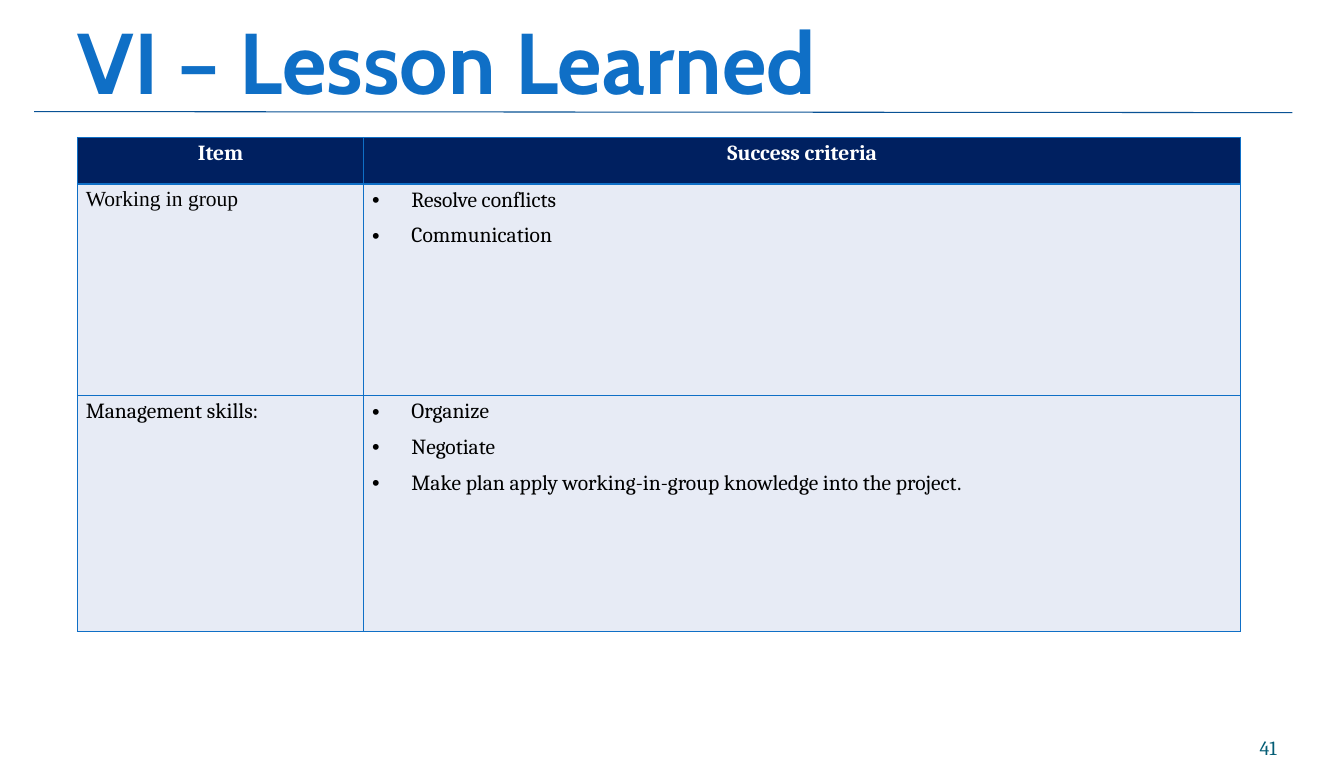
from lxml import etree
from pptx import Presentation
from pptx.dml.color import RGBColor
from pptx.enum.shapes import MSO_CONNECTOR
from pptx.enum.text import MSO_ANCHOR, MSO_AUTO_SIZE, PP_ALIGN
from pptx.oxml.ns import qn
from pptx.util import Inches, Pt

STRAIGHT = MSO_CONNECTOR.STRAIGHT
BOTTOM = MSO_ANCHOR.BOTTOM
NO_AUTOFIT = MSO_AUTO_SIZE.NONE
LEFT, CENTER, RIGHT = PP_ALIGN.LEFT, PP_ALIGN.CENTER, PP_ALIGN.RIGHT

COLORS = {
    "title": "0F6FC6",
    "white": "FFFFFF",
    "black": "000000",
    "number": "045D75",
    "rule": "095295",
    "border": "0F6FC6",
    "header": "002060",
    "body": "E7EBF5",
}


def add_line_properties(parent, tag, color, width):
    line = etree.SubElement(parent, qn(tag), w=str(Pt(width)))
    fill = etree.SubElement(line, qn("a:solidFill"))
    etree.SubElement(fill, qn("a:srgbClr"), val=COLORS[color])
    return line


def format_font(font, name, size, color, bold=False):
    font.name = name
    font.size = Pt(size)
    font.bold = bold
    font.color.rgb = RGBColor.from_string(COLORS[color])


presentation = Presentation()
presentation.slide_width = Inches(13)
presentation.slide_height = Inches(7.5)
slide = presentation.slides.add_slide(presentation.slide_layouts[5])

title = slide.shapes.title
title.left, title.top = Inches(0.75), Inches(-0.17)
title.width, title.height = Inches(11.7), Inches(1.25)
title.text_frame.text = "VI – Lesson Learned"
title.text_frame.margin_top = Inches(0.06)
title_paragraph = title.text_frame.paragraphs[0]
title_paragraph.alignment = LEFT
title_run = title_paragraph.runs[0]
format_font(title_run.font, "Cabin", 60, "title", True)
title_properties = title_run._r.get_or_add_rPr()
title_properties.insert(0, add_line_properties(title_properties, "a:ln", "white", 1.45))

number_box = slide.shapes.add_textbox(Inches(11.27), Inches(6.95), Inches(1.08), Inches(0.4))
number_box.text_frame.text = "41"
number_box.text_frame.margin_top = 0
number_paragraph = number_box.text_frame.paragraphs[0]
number_paragraph.alignment = RIGHT
format_font(number_paragraph.runs[0].font, "Cambria", 14, "number")

for shape in (title, number_box):
    frame = shape.text_frame
    frame.word_wrap = True
    frame.auto_size = NO_AUTOFIT
    frame.vertical_anchor = BOTTOM
    frame.margin_left = frame.margin_right = frame.margin_bottom = 0

title_rule = slide.shapes.add_connector(
    STRAIGHT, Inches(0.33), Inches(1.08), Inches(12.5), Inches(1.09)
)
title_rule.line.color.rgb = RGBColor.from_string(COLORS["rule"])
title_rule.line.width = Pt(0.75)
etree.SubElement(title_rule._element.spPr, qn("a:effectLst"))

rows = [
    ("Item", ["Success criteria"]),
    ("Working in group", ["Resolve conflicts", "Communication"]),
    (
        "Management skills:",
        ["Organize", "Negotiate", "Make plan apply working-in-group knowledge into the project."],
    ),
]
column_widths = [2.77, 8.48]
row_heights = [0.45, 2.05, 2.28]
table = slide.shapes.add_table(
    3, 2, Inches(0.75), Inches(1.33), Inches(sum(column_widths)), Inches(sum(row_heights))
).table
for column, width in zip(table.columns, column_widths):
    column.width = Inches(width)
for row, height in zip(table.rows, row_heights):
    row.height = Inches(height)

for row_index, (item, criteria) in enumerate(rows):
    is_header = row_index == 0
    for column_index, lines in enumerate([[item], criteria]):
        cell = table.cell(row_index, column_index)
        cell.margin_left = cell.margin_right = Inches(0.08)
        cell.margin_top = cell.margin_bottom = 0
        cell_properties = cell._tc.get_or_add_tcPr()
        for side in ("a:lnL", "a:lnR", "a:lnT", "a:lnB"):
            add_line_properties(cell_properties, side, "border", 1)
        cell.fill.solid()
        cell.fill.fore_color.rgb = RGBColor.from_string(COLORS["header" if is_header else "body"])

        cell.text_frame.text = "\n".join(lines)
        font_name = "Times New Roman" if item == "Working in group" and column_index == 0 else "Cambria"
        for line_index, paragraph in enumerate(cell.text_frame.paragraphs):
            paragraph.alignment = CENTER if is_header else LEFT
            paragraph.line_spacing = 1.15
            if column_index == 1 and not is_header:
                if line_index > 0:
                    paragraph.space_before = Pt(5)
                paragraph_properties = paragraph._p.get_or_add_pPr()
                paragraph_properties.set("marL", str(Inches(0.38)))
                paragraph_properties.set("indent", str(Inches(-0.38)))
                etree.SubElement(paragraph_properties, qn("a:buFont"), typeface="Arial")
                etree.SubElement(paragraph_properties, qn("a:buChar"), char="•")
            format_font(
                paragraph.runs[0].font, font_name, 15, "white" if is_header else "black", is_header
            )

presentation.save("out.pptx")
